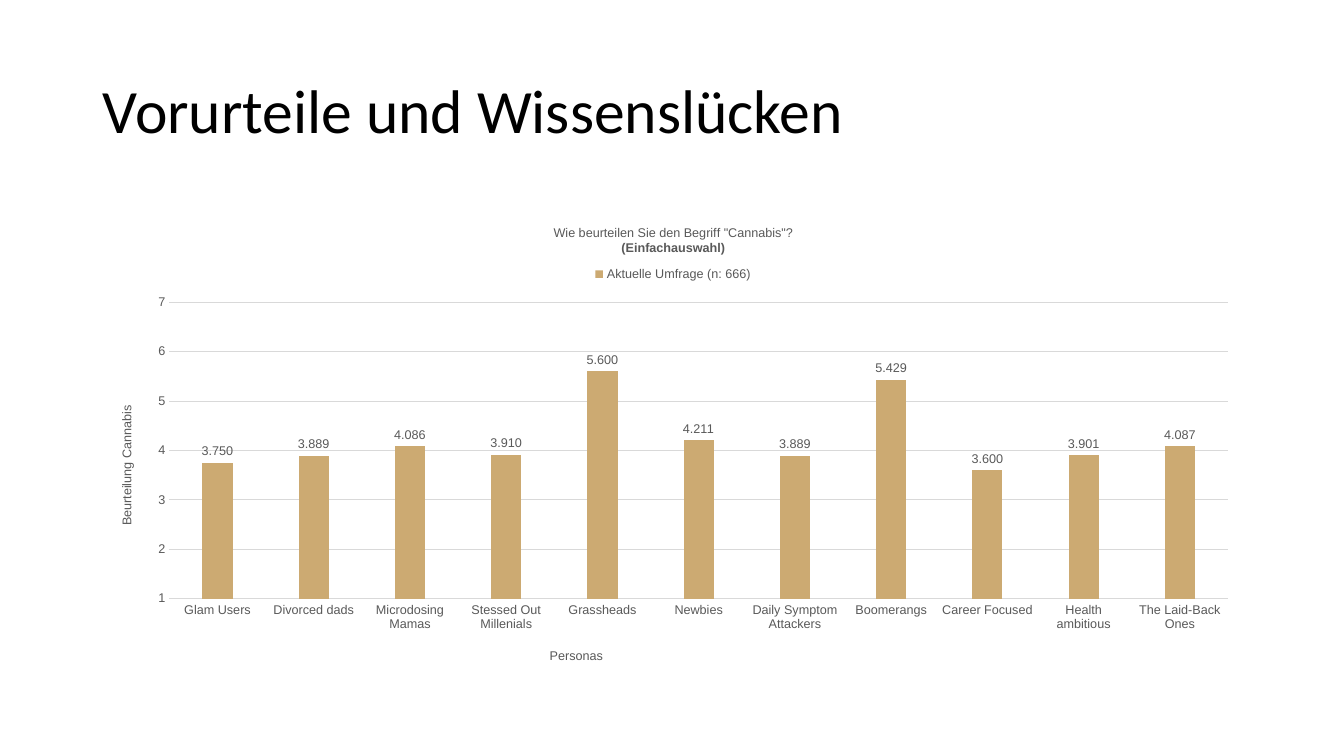
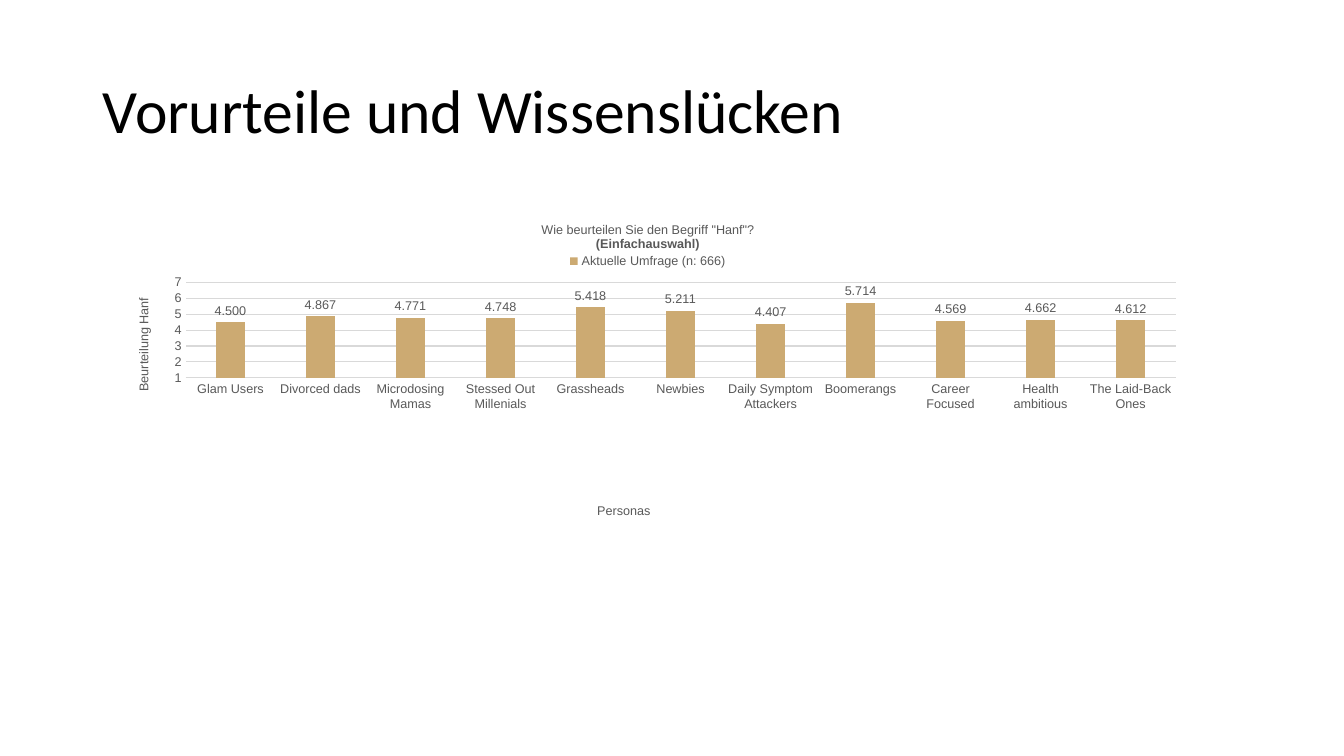
from lxml import etree
from pptx import Presentation
from pptx.chart.data import CategoryChartData
from pptx.dml.color import RGBColor
from pptx.enum import chart as ch, text
from pptx.oxml.ns import qn
from pptx.util import Inches, Pt

BLACK = RGBColor(0x00, 0x00, 0x00)
GREY = RGBColor(0x59, 0x59, 0x59)
RULE = RGBColor(0xD9, 0xD9, 0xD9)
GOLD = RGBColor(0xCC, 0xAA, 0x72)

HEADING = "Vorurteile und Wissenslücken"
SERIES = "Aktuelle Umfrage (n: 666)"
PERSONAS = [
    "Glam Users", "Divorced dads", "Microdosing Mamas",
    "Stessed Out Millenials", "Grassheads", "Newbies",
    "Daily Symptom Attackers", "Boomerangs", "Career Focused",
    "Health ambitious", "The Laid-Back Ones",
]

# Boxes and positions are in slide inches.
SURVEYS = [
    dict(term="Cannabis", box=(0.92, 2, 11.5, 4.76),
         values=[3.75, 3.889, 4.086, 3.91, 5.6, 4.211,
                 3.889, 5.429, 3.6, 3.901, 4.087],
         places=dict(plot=(1.68, 3, 10.5, 2.94), title=(5.46, 2.19),
                     legend=(5.85, 2.62, 1.65, 0.2),
                     category=(5.43, 6.4), value=(1.15, 4))),
    dict(term="Hanf", box=(0.92, 2, 11, 3.24),
         values=[4.5, 4.867, 4.771, 4.748, 5.418, 5.211,
                 4.407, 5.714, 4.569, 4.662, 4.612],
         places=dict(plot=(1.84, 2.8, 9.82, 0.95), title=(5.34, 2.16),
                     legend=(5.6, 2.49, 1.65, 0.2),
                     category=(5.9, 4.96), value=(1.32, 2.93))),
]


def style_font(font, size=9, name="Arial", color=GREY, bold=False):
    font.size, font.name, font.bold = Pt(size), name, bold
    font.color.rgb = color


def write(p, content, **style):
    r = p.add_run()
    r.text = content
    style_font(r.font, **style)


def place(element, index, box, position):
    """Give a chart part a manual layout, from slide inches."""
    for old in element.findall(qn("c:layout")):
        element.remove(old)
    layout = etree.Element(qn("c:layout"))
    element.insert(index, layout)
    manual = etree.SubElement(layout, qn("c:manualLayout"))

    def add(tag, value):
        etree.SubElement(manual, qn("c:" + tag)).set("val", str(value))

    if element.tag == qn("c:plotArea"):
        add("layoutTarget", "inner")
    add("xMode", "edge")
    add("yMode", "edge")
    left, top, width, height = box
    x, y, *size = position
    add("x", (x - left) / width)
    add("y", (y - top) / height)
    for tag, length, whole in zip("wh", size, (width, height)):
        add(tag, length / whole)


class Deck:
    def __init__(self):
        self.prs = Presentation()
        self.prs.slide_width, self.prs.slide_height = Inches(13.33), Inches(7.5)
        self.slide = None

    def new_slide(self, heading):
        self.slide = self.prs.slides.add_slide(self.prs.slide_layouts[6])
        sp = self.slide.shapes.add_textbox(
            Inches(0.92), Inches(0.4), Inches(11.5), Inches(1.45))
        tf = sp.text_frame
        tf.word_wrap = True
        tf.vertical_anchor = text.MSO_ANCHOR.MIDDLE
        p = tf.paragraphs[0]
        p.line_spacing = 0.9
        write(p, heading, size=44, name="Calibri", color=BLACK)

    def column_chart(self, term, box, values, places):
        data = CategoryChartData(number_format="General")
        data.categories = PERSONAS
        data.add_series(SERIES, values)
        chart = self.slide.shapes.add_chart(
            ch.XL_CHART_TYPE.COLUMN_CLUSTERED, *map(Inches, box), data).chart
        style_font(chart.font)
        self.columns(chart.plots[0])
        self.axes(chart, term)

        chart.has_title = True
        tf = chart.chart_title.text_frame
        write(tf.paragraphs[0], f'Wie beurteilen Sie den Begriff "{term}"?')
        write(tf.add_paragraph(), "(Einfachauswahl)", bold=True)

        chart.has_legend = True
        legend = chart.legend
        legend.position = ch.XL_LEGEND_POSITION.TOP
        legend.include_in_layout = False
        style_font(legend.font)

        plot_area = chart.plots[0]._element.getparent()
        place(plot_area, 0, box, places["plot"])
        for part, key in ((chart.chart_title, "title"), (legend, "legend"),
                          (chart.category_axis.axis_title, "category"),
                          (chart.value_axis.axis_title, "value")):
            place(part._element, 1, box, places[key])

    def columns(self, plot):
        plot.gap_width, plot.overlap = 219, -27
        plot.vary_by_categories = False
        fill = plot.series[0].format.fill
        fill.solid()
        fill.fore_color.rgb = GOLD
        plot.has_data_labels = True
        labels = plot.data_labels
        labels.show_value = True
        labels.position = ch.XL_LABEL_POSITION.OUTSIDE_END
        labels.number_format, labels.number_format_is_linked = "0.000", False
        style_font(labels.font)

    def axes(self, chart, term):
        category, value = chart.category_axis, chart.value_axis
        for axis, title in ((category, "Personas"),
                            (value, f"Beurteilung {term}")):
            axis.major_tick_mark = axis.minor_tick_mark = ch.XL_TICK_MARK.NONE
            style_font(axis.tick_labels.font)
            write(axis.axis_title.text_frame.paragraphs[0], title)
        value.minimum_scale, value.maximum_scale, value.major_unit = 1, 7, 1
        value.format.line.fill.background()
        for line in (category.format.line, value.major_gridlines.format.line):
            line.color.rgb, line.width = RULE, Pt(0.75)
        body = value.axis_title._element.find(".//" + qn("a:bodyPr"))
        body.set("rot", "-5400000")
        body.set("vert", "horz")


def main():
    deck = Deck()
    for survey in SURVEYS:
        deck.new_slide(HEADING)
        deck.column_chart(**survey)
    deck.prs.save("out.pptx")


if __name__ == "__main__":
    main()
